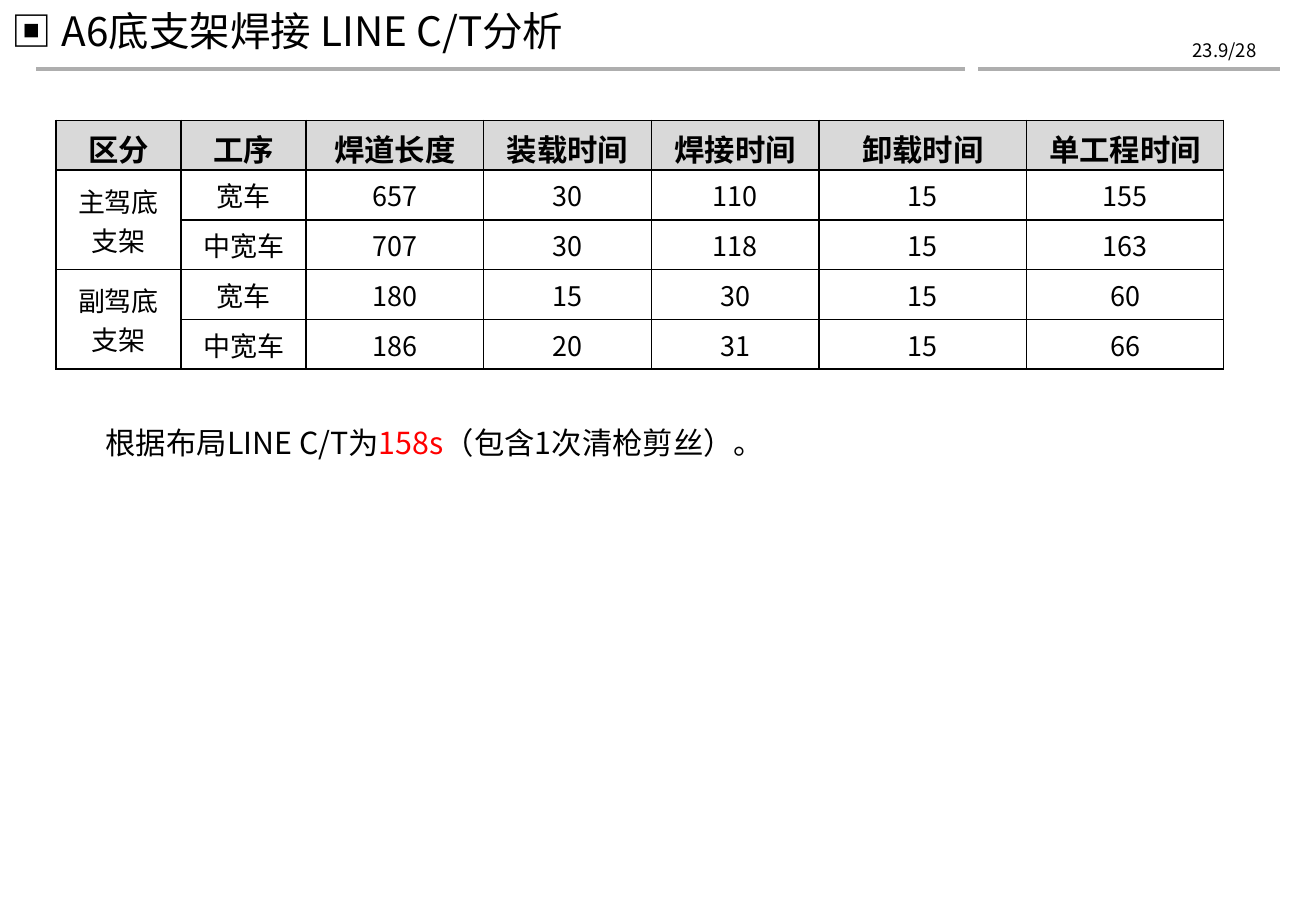
import dataclasses
import typing

import lxml.etree
import pptx
import pptx.dml.color
import pptx.enum.shapes
import pptx.enum.text
import pptx.oxml.ns
import pptx.util

Inches = pptx.util.Inches
ALIGN = pptx.enum.text.PP_ALIGN
MIDDLE = pptx.enum.text.MSO_ANCHOR.MIDDLE
TOP = pptx.enum.text.MSO_ANCHOR.TOP


@dataclasses.dataclass(frozen=True)
class Theme:
    font: str = "Noto Sans CJK SC"
    date_font: str = "Noto Sans CJK KR"
    ink: str = "000000"
    accent: str = "FF0000"
    rule: str = "AEAEAE"
    header: str = "D9D9D9"
    title_size: float = 24
    head_size: float = 18
    body_size: float = 16
    date_size: float = 11
    rule_width: float = 2
    border_width: float = 1


THEME = Theme()


class Run(typing.NamedTuple):
    text: str
    size: float
    color: str = THEME.ink
    font: str = THEME.font
    bold: bool = False


class Box(typing.NamedTuple):
    left: float
    top: float
    width: float
    height: float
    runs: tuple[Run, ...]
    align: ALIGN = ALIGN.LEFT


class Rule(typing.NamedTuple):
    start: float
    end: float
    y: float = 0.57


RULES = (Rule(0.3, 7.94), Rule(8.05, 10.53))
BOXES = (
    Box(9.35, 0.27, 1.09, 0.29,
        (Run("23.9/28", THEME.date_size, font=THEME.date_font),), ALIGN.RIGHT),
    Box(0, 0, 9.12, 0.5, (Run("▣ A6底支架焊接 LINE C/T分析", THEME.title_size),)),
    Box(0.77, 3.44, 6.14, 0.4, (
        Run("根据布局LINE C/T为", THEME.head_size),
        Run("158s", THEME.head_size, THEME.accent),
        Run("（包含1次清枪剪丝）。", THEME.head_size),
    )),
)
COL_WIDTHS = (1.03, 1.03, 1.46, 1.38, 1.38, 1.71, 1.62)
ROW_HEIGHT = 0.41
ROWS = (
    ("区分", "工序", "焊道长度", "装载时间", "焊接时间", "卸载时间", "单工程时间"),
    ("主驾底支架", "宽车", "657", "30", "110", "15", "155"),
    ("", "中宽车", "707", "30", "118", "15", "163"),
    ("副驾底支架", "宽车", "180", "15", "30", "15", "60"),
    ("", "中宽车", "186", "20", "31", "15", "66"),
)


def rgb(color: str) -> pptx.dml.color.RGBColor:
    """Turn a hex string into a colour."""
    return pptx.dml.color.RGBColor.from_string(color)


def add_sub(parent: typing.Any, tag: str, **attrs: str) -> typing.Any:
    """Append a DrawingML element."""
    return lxml.etree.SubElement(parent, pptx.oxml.ns.qn(tag), attrs)


def write(p: typing.Any, run: Run) -> None:
    """Add one styled run to a paragraph."""
    r = p.add_run()
    r.text = run.text
    r.font.size = pptx.util.Pt(run.size)
    r.font.bold = run.bold
    r.font.color.rgb = rgb(run.color)
    r.font.name = run.font
    add_sub(r.font._element, "a:ea", typeface=run.font)


def draw_rule(s: typing.Any, rule: Rule) -> None:
    """Draw a header rule."""
    line = s.shapes.add_connector(
        pptx.enum.shapes.MSO_CONNECTOR.STRAIGHT,
        Inches(rule.start), Inches(rule.y), Inches(rule.end), Inches(rule.y))
    line.line.color.rgb = rgb(THEME.rule)
    line.line.width = pptx.util.Pt(THEME.rule_width)
    add_sub(line._element.spPr, "a:effectLst")


def draw_box(s: typing.Any, box: Box) -> None:
    """Draw a text box."""
    sp = s.shapes.add_textbox(*map(Inches, box[:4]))
    tf = sp.text_frame
    tf.word_wrap = True
    tf.vertical_anchor = MIDDLE
    p = tf.paragraphs[0]
    p.alignment = box.align
    for run in box.runs:
        write(p, run)


def style_cell(cell: typing.Any, is_head: bool) -> None:
    """Set the margins, borders and fill of a cell."""
    cell.vertical_anchor = TOP if is_head else MIDDLE
    cell.margin_top = Inches(0.05 if is_head else 0.04)
    cell.margin_bottom = Inches(0 if is_head else 0.04)
    tc_pr = cell._tc.get_or_add_tcPr()
    for side in ("a:lnL", "a:lnR", "a:lnT", "a:lnB"):
        ln = add_sub(tc_pr, side, w=str(pptx.util.Pt(THEME.border_width)))
        add_sub(add_sub(ln, "a:solidFill"), "a:srgbClr", val=THEME.ink)
    if is_head:
        cell.fill.solid()
        cell.fill.fore_color.rgb = rgb(THEME.header)
    else:
        cell.fill.background()


def draw_table(s: typing.Any) -> None:
    """Draw the cycle time table."""
    table = s.shapes.add_table(
        len(ROWS), len(COL_WIDTHS), Inches(0.46), Inches(0.99),
        Inches(sum(COL_WIDTHS)), Inches(ROW_HEIGHT * len(ROWS))).table
    table.first_row = table.horz_banding = False
    for col, width in zip(table.columns, COL_WIDTHS):
        col.width = Inches(width)
    for i, texts in enumerate(ROWS):
        table.rows[i].height = Inches(ROW_HEIGHT)
        is_head = i == 0
        size = THEME.head_size if is_head else THEME.body_size
        for j, text in enumerate(texts):
            cell = table.cell(i, j)
            style_cell(cell, is_head)
            if text:
                p = cell.text_frame.paragraphs[0]
                p.alignment = ALIGN.CENTER
                write(p, Run(text, size, bold=is_head))
            else:
                table.cell(i - 1, j).merge(cell)


def main() -> None:
    """Build and save the slide."""
    prs = pptx.Presentation()
    prs.slide_width, prs.slide_height = Inches(10.83), Inches(7.5)
    s = prs.slides.add_slide(prs.slide_layouts[6])
    for rule in RULES:
        draw_rule(s, rule)
    for box in BOXES:
        draw_box(s, box)
    draw_table(s)
    prs.save("out.pptx")


if __name__ == "__main__":
    main()
